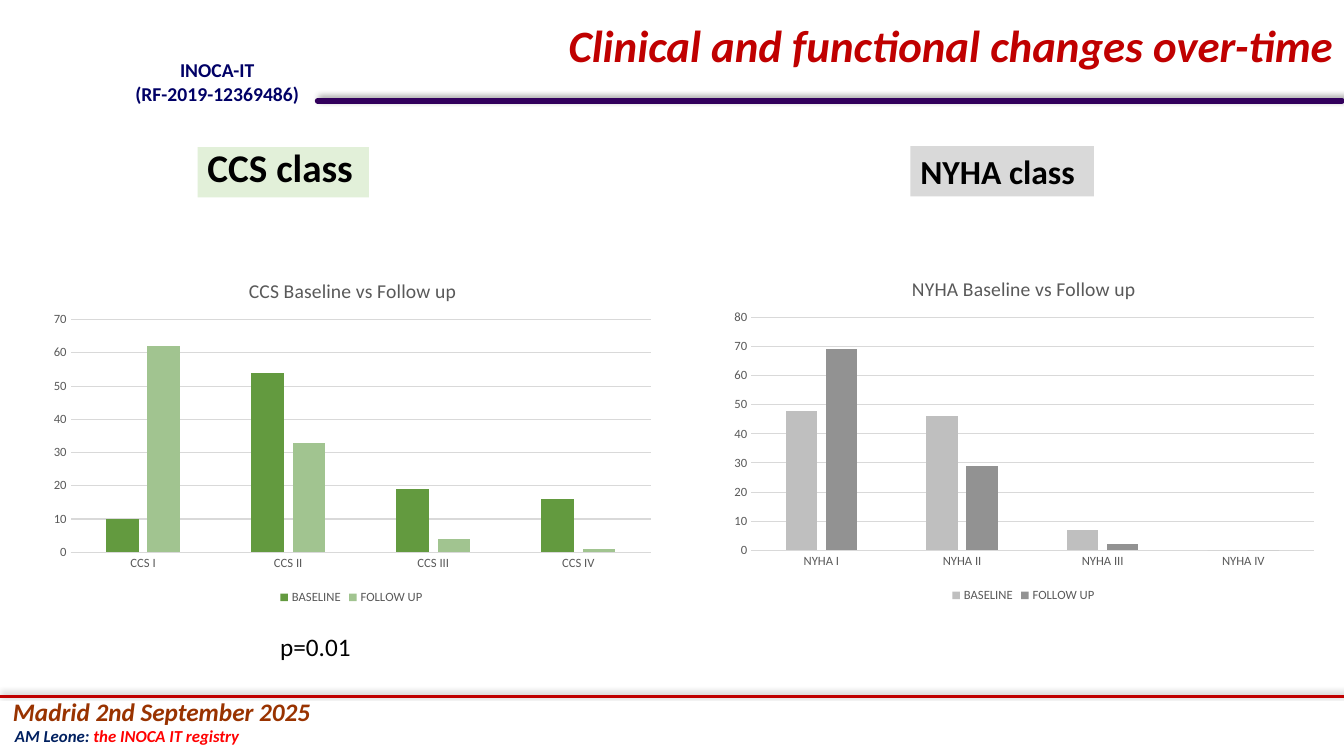
from lxml.etree import SubElement
from pptx import Presentation
from pptx.chart.data import CategoryChartData
from pptx.dml.color import RGBColor
from pptx.enum.chart import XL_CHART_TYPE, XL_LEGEND_POSITION, XL_TICK_MARK
from pptx.enum.shapes import MSO_CONNECTOR, MSO_SHAPE
from pptx.enum.text import MSO_ANCHOR, PP_ALIGN
from pptx.oxml import parse_xml
from pptx.oxml.ns import nsdecls, qn
from pptx.util import Pt

PX = 9144  # 100 px to the inch
FONT = "Calibri"
RED = RGBColor(0xC0, 0x00, 0x00)
BRIGHT = RGBColor(0xFF, 0x00, 0x00)
BROWN = RGBColor(0x99, 0x33, 0x00)
NAVY = RGBColor(0x00, 0x20, 0x60)
BLUE = RGBColor(0x00, 0x00, 0x66)
PURPLE = RGBColor(0x32, 0x00, 0x5C)
BLACK = RGBColor(0x00, 0x00, 0x00)
MINT = RGBColor(0xE2, 0xF0, 0xD9)
PALE = RGBColor(0xD9, 0xD9, 0xD9)
TEXT = RGBColor(0x59, 0x59, 0x59)
GREEN = RGBColor(0x63, 0x9A, 0x3F)
SAGE = RGBColor(0xA1, 0xC4, 0x90)
SILVER = RGBColor(0xBF, 0xBF, 0xBF)
GREY = RGBColor(0x92, 0x92, 0x92)

LEFT, MID, RIGHT = PP_ALIGN.LEFT, PP_ALIGN.CENTER, PP_ALIGN.RIGHT
BOLD = {"bold": True}
SLANT = {"bold": True, "italic": True}

# box, size, style, align, line spacing, fill, paragraphs of (text, colour) runs
TEXTS = [
    ((3, 686, 1191, 40), 18, SLANT, LEFT, 1, None,
     [[("Madrid 2nd September 2025", BROWN)]]),
    ((5, 715, 1191, 71), 12, SLANT, LEFT, 1, None,
     [[("AM Leone:", NAVY), (" the INOCA IT registry", BRIGHT)]]),
    ((96, 53, 239, 81), 14, BOLD, MID, 1, None,
     [[("INOCA-IT", BLUE)], [("(RF-2019-12369486)", BLUE)]]),
    ((183, -2, 1150, 100), 32, SLANT, RIGHT, 0.9, None,
     [[("Clinical and functional changes over-time", RED)]]),
    ((196, 146, 170, 50), 28, BOLD, LEFT, 0.8, MINT,
     [[("CCS class", BLACK)]]),
    ((903, 145, 182, 50), 24, BOLD, LEFT, 1, PALE,
     [[("NYHA class", BLACK)]]),
    ((268, 621, 108, 40), 18, {}, LEFT, 1, None, [[("p=0.01", BLACK)]]),
]
TITLE = 3  # the one text set in the middle of its box

RULES = [((315, 100, 1331, 100), PURPLE, 4), ((1335, 691, 0, 691), RED, 2)]

# box, group, top of axis, title left (share of width), (colour, values) by series
CHARTS = [
    ((39, 254, 619, 350), "CCS", 70, 0.33,
     [(GREEN, (10, 54, 19, 16)), (SAGE, (62, 33, 4, 1))]),
    ((715, 252, 600, 350), "NYHA", 80, 0.31,
     [(SILVER, (48, 46, 7, 0)), (GREY, (69, 29, 2, 0))]),
]
GRADES = ("I", "II", "III", "IV")
NAMES = ("BASELINE", "FOLLOW UP")
PLOT = {"x": 0.05, "y": 0.18, "w": 0.93, "h": 0.66}


def scale(box):
    return [n * PX for n in box]


def style(font, size, color, **more):
    for key, val in {"name": FONT, "size": Pt(size), **more}.items():
        setattr(font, key, val)
    font.color.rgb = color


def add_text(slide, box, size, look, align, gap, fill, paras):
    if fill is None:
        shape = slide.shapes.add_textbox(*scale(box))
    else:
        shape = slide.shapes.add_shape(MSO_SHAPE.RECTANGLE, *scale(box))
        shape.shadow.inherit = False
        shape.fill.solid()
        shape.fill.fore_color.rgb = fill
        shape.line.fill.background()
    frame = shape.text_frame
    frame.word_wrap = True
    frame.vertical_anchor = MSO_ANCHOR.TOP
    for i, runs in enumerate(paras):
        para = frame.add_paragraph() if i else frame.paragraphs[0]
        para.alignment, para.line_spacing = align, gap
        for words, color in runs:
            run = para.add_run()
            run.text = words
            style(run.font, size, color, **look)
    return shape


def add_rule(slide, ends, color, width):
    """Draw a line with a soft shadow up and to the right."""
    rule = slide.shapes.add_connector(MSO_CONNECTOR.STRAIGHT, *scale(ends))
    rule.line.color.rgb = color
    rule.line.width = Pt(width)
    props = rule.element.spPr
    props.find(qn("a:ln")).set("cap", "rnd")
    glow = SubElement(SubElement(props, qn("a:effectLst")), qn("a:outerShdw"),
                      blurRad=str(Pt(4)), dist=str(Pt(3)), dir="18900000")
    tint = SubElement(glow, qn("a:srgbClr"), val="000000")
    SubElement(tint, qn("a:alpha"), val="40000")


def place(node, at, spots, inner=False):
    """Fix where a chart part lies, in shares of the chart's size."""
    for old in node.findall(qn("c:layout")):
        node.remove(old)
    tags = '<c:layoutTarget val="inner"/>' if inner else ""
    tags += "".join(f'<c:{k}Mode val="edge"/>' for k in "xy")
    tags += "".join(f'<c:{k} val="{v}"/>' for k, v in spots.items())
    node.insert(at, parse_xml(
        f'<c:layout {nsdecls("c")}><c:manualLayout>{tags}'
        '</c:manualLayout></c:layout>'))


def add_bars(slide, box, group, top, left, series):
    data = CategoryChartData()
    data.categories = [f"{group} {grade}" for grade in GRADES]
    for name, (_, vals) in zip(NAMES, series):
        data.add_series(name, vals)
    chart = slide.shapes.add_chart(
        XL_CHART_TYPE.COLUMN_CLUSTERED, *scale(box), data).chart
    style(chart.font, 10, BLACK)

    frame = chart.chart_title.text_frame
    frame.text = f"{group} Baseline vs Follow up"
    style(frame.paragraphs[0].runs[0].font, 14, TEXT, bold=False)
    chart.chart_title.include_in_layout = False
    place(chart.element.find(".//" + qn("c:title")), 1, {"x": left, "y": 0.05})
    place(chart.element.find(".//" + qn("c:plotArea")), 0, PLOT, True)

    chart.has_legend = True
    chart.legend.position = XL_LEGEND_POSITION.BOTTOM
    chart.legend.include_in_layout = False
    style(chart.legend.font, 9, TEXT)

    cat, val = chart.category_axis, chart.value_axis
    for axis in (cat, val):
        axis.major_tick_mark = axis.minor_tick_mark = XL_TICK_MARK.NONE
        style(axis.tick_labels.font, 9, TEXT)
    for key, num in {"minimum_scale": 0, "maximum_scale": top,
                     "major_unit": 10}.items():
        setattr(val, key, num)
    val.format.line.fill.background()
    for line in (cat.format.line, val.major_gridlines.format.line):
        line.color.rgb = PALE
        line.width = Pt(0.75)

    plot = chart.plots[0]
    for key, num in {"gap_width": 219, "overlap": -27,
                     "vary_by_categories": False}.items():
        setattr(plot, key, num)
    for bars, (color, _) in zip(plot.series, series):
        bars.format.fill.solid()
        bars.format.fill.fore_color.rgb = color


def main():
    deck = Presentation()
    deck.slide_width, deck.slide_height = scale((1333, 750))
    slide = deck.slides.add_slide(deck.slide_layouts[6])
    for rule in RULES:
        add_rule(slide, *rule)
    shapes = [add_text(slide, *item) for item in TEXTS]
    shapes[TITLE].text_frame.vertical_anchor = MSO_ANCHOR.MIDDLE
    for item in CHARTS:
        add_bars(slide, *item)
    deck.save("out.pptx")


if __name__ == "__main__":
    main()
